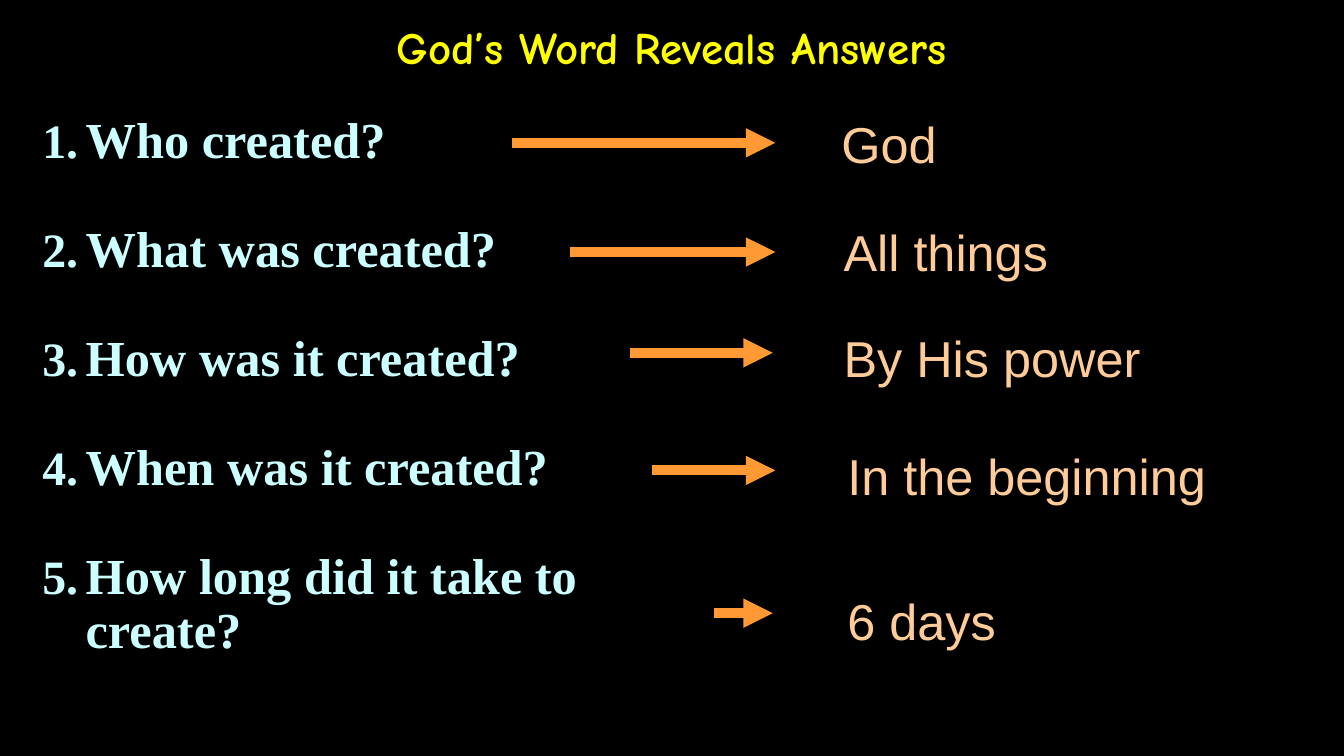
from dataclasses import dataclass

from pptx import Presentation
from pptx.dml.color import RGBColor
from pptx.enum.shapes import MSO_CONNECTOR
from pptx.enum.text import MSO_ANCHOR, PP_ALIGN
from pptx.oxml.ns import qn
from pptx.text.text import TextFrame
from pptx.util import Inches, Length, Pt
from lxml.etree import SubElement


@dataclass(frozen=True)
class Theme:
    background: str = "000000"
    title: str = "FFFF00"
    question: str = "CCFFFF"
    answer: str = "FFCC99"
    arrow: str = "FF9933"
    title_font: str = "Comic Neue"
    question_font: str = "Times New Roman"
    answer_font: str = "Arial"
    title_size: float = 32
    body_size: float = 36
    line_pitch: float = 38.9
    arrow_width: float = 7


@dataclass(frozen=True)
class Item:
    """A question and its answer; places are grid columns and rows."""
    question: str
    answer: str
    left: float
    top: float
    width: float
    arrow_start: float
    arrow_end: float
    arrow_row: float


THEME = Theme()
COLS, ROWS = 160, 90
WIDTH, HEIGHT = Inches(13.33), Inches(7.5)
ANSWER_ROWS = 8.4

ITEMS = [
    Item("Who created?", "God", 99, 12.25, 17.6, 61, 92.3, 17),
    Item("What was created?", "All things", 99.25, 25.1, 28.8, 67.8, 92.3, 30),
    Item("How was it created?", "By His power", 99.25, 37.8, 44.3, 75, 92, 42),
    Item("When was it created?", "In the beginning", 99.7, 51.8, 46.8, 77.6, 92.3, 56),
    Item("How long did it take to create?", "6 days", 99.7, 69, 29, 85, 92, 73),
]


def col(n: float) -> Length:
    return Length(round(WIDTH * n / COLS))


def row(n: float) -> Length:
    return Length(round(HEIGHT * n / ROWS))


def place(sp, left: float, top: float, width: float, height: float) -> None:
    sp.left, sp.top = col(left), row(top)
    sp.width, sp.height = col(width), row(height)


def write(tf: TextFrame, *lines: str, font: str, size: float, color: str,
          bold: bool = False, align=PP_ALIGN.LEFT, pitch=None, after: float = 0,
          numbered: bool = False) -> None:
    """Write one paragraph per line with a shared format."""
    tf.word_wrap = True
    for i, line in enumerate(lines):
        p = tf.add_paragraph() if i else tf.paragraphs[0]
        p.alignment = align
        p.space_after = Pt(after)
        if pitch:
            p.line_spacing = Pt(pitch)
        r = p.add_run()
        r.text = line
        r.font.name, r.font.size, r.font.bold = font, Pt(size), bold
        r.font.color.rgb = RGBColor.from_string(color)
        if numbered:
            pPr = p._p.get_or_add_pPr()
            pPr.set("marL", str(Inches(0.43)))
            pPr.set("indent", str(-Inches(0.43)))
            SubElement(pPr, qn("a:buSzPct"), val="95000")
            SubElement(pPr, qn("a:buFont"), typeface=font)
            SubElement(pPr, qn("a:buAutoNum"), type="arabicPeriod")


def add_arrow(s, start: float, end: float, y: float) -> None:
    sp = s.shapes.add_connector(MSO_CONNECTOR.STRAIGHT, col(start), row(y), col(end), row(y))
    sp.line.color.rgb = RGBColor.from_string(THEME.arrow)
    sp.line.width = Pt(THEME.arrow_width)
    SubElement(sp.line._get_or_add_ln(), qn("a:tailEnd"), type="triangle")
    SubElement(sp._element.spPr, qn("a:effectLst"))


def add_answer(s, item: Item) -> None:
    sp = s.shapes.add_textbox(0, 0, 0, 0)
    place(sp, item.left, item.top, item.width, ANSWER_ROWS)
    sp.text_frame.margin_top = Inches(0.1)
    write(sp.text_frame, item.answer, font=THEME.answer_font,
          size=THEME.body_size, color=THEME.answer)


def main() -> None:
    prs = Presentation()
    prs.slide_width, prs.slide_height = WIDTH, HEIGHT
    s = prs.slides.add_slide(prs.slide_layouts[5])
    s.background.fill.solid()
    s.background.fill.fore_color.rgb = RGBColor.from_string(THEME.background)

    # Title
    title = s.shapes.title
    place(title, 29, 0, 102, 11)
    title.text_frame.vertical_anchor = MSO_ANCHOR.MIDDLE
    write(title.text_frame, "God’s Word Reveals Answers", font=THEME.title_font,
          size=THEME.title_size, color=THEME.title, bold=True, align=PP_ALIGN.CENTER)

    # Numbered questions, one empty line's height apart
    questions = s.shapes.add_textbox(0, 0, 0, 0)
    place(questions, 3.85, 13, 76.2, 75)
    write(questions.text_frame, *(item.question for item in ITEMS),
          font=THEME.question_font, size=THEME.body_size, color=THEME.question,
          bold=True, pitch=THEME.line_pitch, after=THEME.line_pitch, numbered=True)

    # Answers and the arrows that lead to them
    for item in ITEMS:
        add_answer(s, item)
        add_arrow(s, item.arrow_start, item.arrow_end, item.arrow_row)

    prs.save("out.pptx")


if __name__ == "__main__":
    main()
